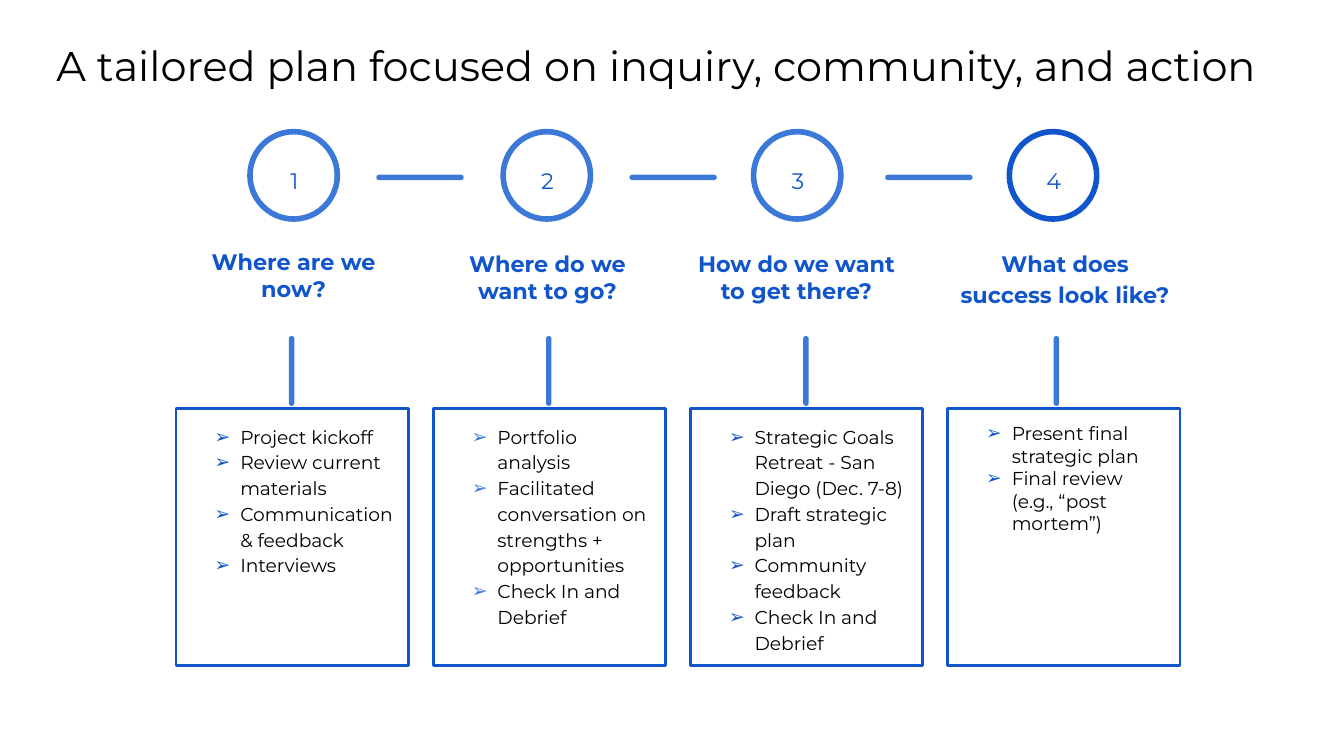
from dataclasses import dataclass

from lxml.etree import SubElement
from pptx import Presentation
from pptx.dml.color import RGBColor
from pptx.enum.shapes import MSO_SHAPE as Shape
from pptx.enum.text import MSO_ANCHOR as Anchor, PP_ALIGN as Align
from pptx.oxml.ns import qn
from pptx.util import Inches, Pt


@dataclass(frozen=True)
class Theme:
    font: str = "Montserrat"
    ink: RGBColor = RGBColor.from_string("000000")
    blue: RGBColor = RGBColor.from_string("1155CC")
    light_blue: RGBColor = RGBColor.from_string("3C78D8")
    title: float = 22.2
    heading: float = 12
    body: float = 10


@dataclass(frozen=True)
class Phase:
    heading: str
    tasks: tuple
    circle_x: float  # offsets from the left edge of the column
    heading_x: float
    stem_x: float = 0.84
    dash_x: float | None = None
    heading_width: float = 1.68
    heading_height: float = 0.61
    heading_spacing: float = 1.0
    task_spacing: float = 1.15
    ring: RGBColor = Theme.light_blue
    bullet: RGBColor = Theme.blue


THEME = Theme()
COLUMN_WIDTH = 1.73
FIRST_LEFT, LAST_LEFT = 1.31, 7.05

PHASES = (
    Phase("Where are we now?",
          ("Project kickoff", "Review current materials",
           "Communication & feedback", "Interviews"),
          circle_x=0.55, heading_x=0.01, dash_x=1.49, heading_width=1.73,
          heading_height=0.6),
    Phase("Where do we want to go?",
          ("Portfolio analysis",
           "Facilitated conversation on strengths + opportunities",
           "Check In and Debrief"),
          circle_x=0.52, heading_x=0.01, dash_x=1.46,
          bullet=THEME.light_blue),
    Phase("How do we want to get there?",
          ("Strategic Goals Retreat - San Diego (Dec. 7-8)",
           "Draft strategic plan", "Community feedback",
           "Check In and Debrief"),
          circle_x=0.47, heading_x=-0.05, dash_x=1.45),
    Phase("What does success look like?",
          ("Present final strategic plan",
           "Final review (e.g., “post mortem”)"),
          circle_x=0.46, heading_x=-0.05, stem_x=0.79, heading_width=1.85,
          heading_height=0.64, heading_spacing=1.15, task_spacing=1.0,
          ring=THEME.blue),
)


def set_frame(frame, anchor=Anchor.TOP):
    frame.word_wrap = True
    frame.vertical_anchor = anchor
    frame.margin_left = frame.margin_right = Inches(0.1)
    frame.margin_top = frame.margin_bottom = Inches(0.1)


def set_paragraph(paragraph, text, size, color, align, spacing=1.0, bold=False):
    paragraph.text = text
    paragraph.alignment = align
    paragraph.line_spacing = spacing
    font = paragraph.font
    font.name, font.size, font.bold = THEME.font, Pt(size), bold
    font.color.rgb = color


def add_bullet(paragraph, color):
    props = paragraph._p.get_or_add_pPr()
    props.set("marL", str(Inches(0.38)))
    props.set("indent", str(Inches(-0.19)))
    # Colour, font and character must come before the run defaults
    tint = props.makeelement(qn("a:buClr"))
    SubElement(tint, qn("a:srgbClr")).set("val", str(color))
    face = props.makeelement(qn("a:buFont"))
    face.set("typeface", THEME.font)
    mark = props.makeelement(qn("a:buChar"))
    mark.set("char", "➢")
    defaults = props.find(qn("a:defRPr"))
    for part in (tint, face, mark):
        defaults.addprevious(part)


def add_outline(slide, kind, left, top, width, height, color, weight):
    outline = slide.shapes.add_shape(
        kind, Inches(left), Inches(top), Inches(width), Inches(height))
    outline.shadow.inherit = False
    outline.fill.background()
    outline.line.color.rgb = color
    outline.line.width = Pt(weight)
    return outline


def add_bar(slide, left, top, width, height):
    bar = slide.shapes.add_shape(
        Shape.ROUNDED_RECTANGLE,
        Inches(left), Inches(top), Inches(width), Inches(height))
    bar.adjustments[0] = 0.5
    bar.shadow.inherit = False
    bar.fill.solid()
    bar.fill.fore_color.rgb = THEME.light_blue
    bar.line.fill.background()
    return bar


def add_label(slide, left, top, width, height, text, anchor=Anchor.TOP,
              spacing=1.0, bold=False):
    label = slide.shapes.add_textbox(
        Inches(left), Inches(top), Inches(width), Inches(height))
    set_frame(label.text_frame, anchor)
    set_paragraph(label.text_frame.paragraphs[0], text, THEME.heading,
                  THEME.blue, Align.CENTER, spacing, bold)


def add_title(slide, left, top, width, height, text):
    title = slide.shapes.title
    title.left, title.top = Inches(left), Inches(top)
    title.width, title.height = Inches(width), Inches(height)
    set_frame(title.text_frame)
    set_paragraph(title.text_frame.paragraphs[0], text, THEME.title,
                  THEME.ink, Align.LEFT)


def add_task_card(slide, left, top, width, height, phase):
    card = add_outline(slide, Shape.RECTANGLE, left, top, width, height,
                       THEME.blue, 1.5)
    frame = card.text_frame
    set_frame(frame)
    for i, task in enumerate(phase.tasks):
        paragraph = frame.add_paragraph() if i else frame.paragraphs[0]
        set_paragraph(paragraph, task, THEME.body, THEME.ink, Align.LEFT,
                      phase.task_spacing)
        add_bullet(paragraph, phase.bullet)


def add_phase(slide, left, top, width, number, phase):
    # Numbered circle and the dash to the next one
    circle_left = left + phase.circle_x
    add_outline(slide, Shape.OVAL, circle_left, top, 0.65, 0.65, phase.ring, 3)
    add_label(slide, circle_left + 0.09, top + 0.13, 0.48, 0.39, str(number),
              spacing=1.15)
    if phase.dash_x is not None:
        add_bar(slide, left + phase.dash_x, top + 0.32, 0.65, 0.04)

    # Question, stem and task card
    add_label(slide, left + phase.heading_x, top + 0.77, phase.heading_width,
              phase.heading_height, phase.heading, Anchor.BOTTOM,
              phase.heading_spacing, True)
    stem = add_bar(slide, left + phase.stem_x - 0.24, top + 1.76, 0.52, 0.04)
    stem.rotation = 270
    add_task_card(slide, left, top + 2.06, width, 1.91, phase)


def main():
    deck = Presentation()
    deck.slide_width = Inches(10)
    deck.slide_height = deck.slide_width * 9 // 16
    slide = deck.slides.add_slide(deck.slide_layouts[5])
    add_title(slide, 0.32, 0.2, 9.59, 0.86,
              "A tailored plan focused on inquiry, community, and action")
    pitch = (LAST_LEFT - FIRST_LEFT) / (len(PHASES) - 1)
    for i, phase in enumerate(PHASES):
        add_phase(slide, FIRST_LEFT + i * pitch, 0.98, COLUMN_WIDTH, i + 1,
                  phase)
    deck.save("out.pptx")


if __name__ == "__main__":
    main()
